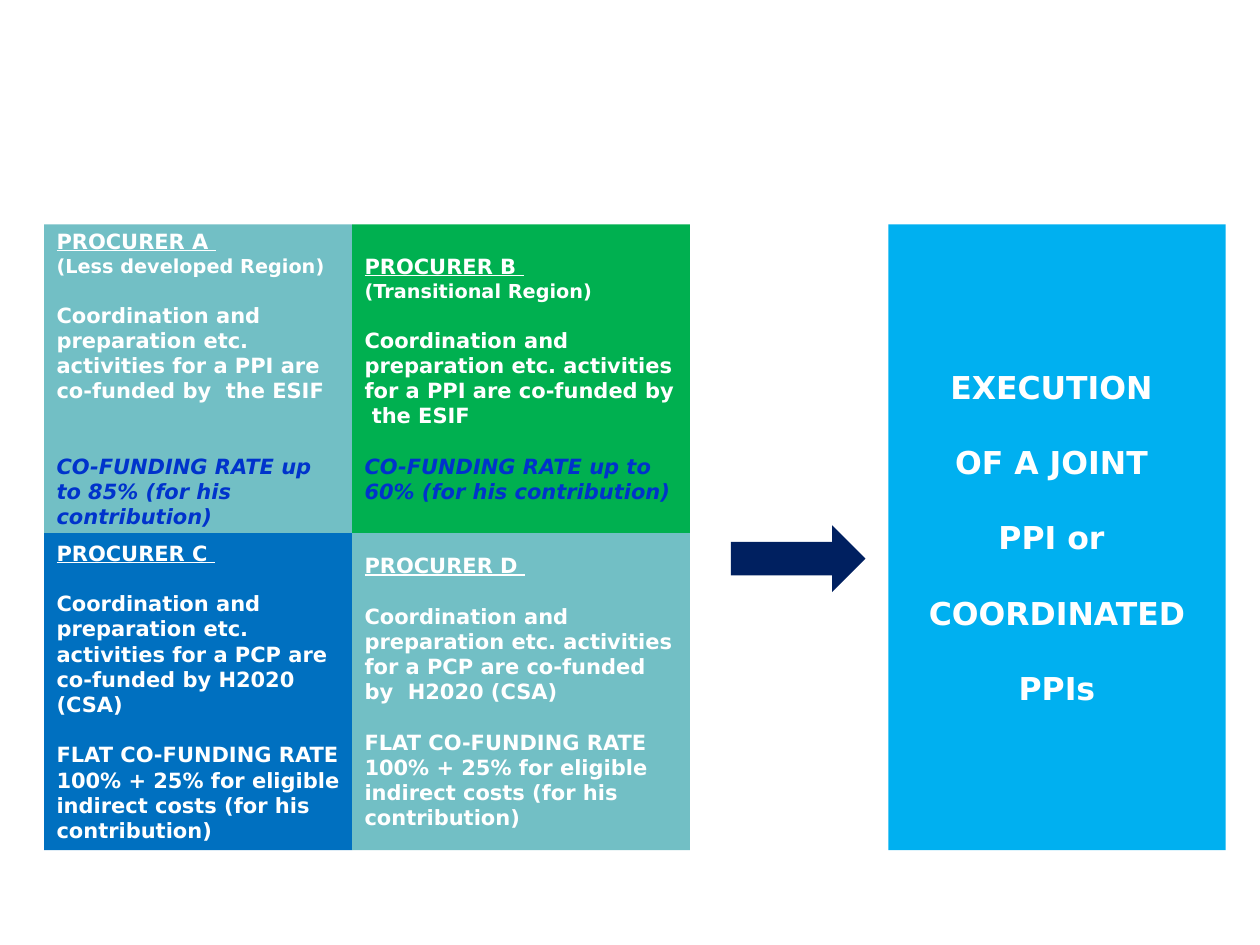
from pptx import Presentation
from pptx.dml.color import RGBColor
from pptx.enum import shapes, text
from pptx.util import Pt

WHITE = RGBColor(255, 255, 255)
TEAL = RGBColor(0x72, 0xBF, 0xC5)
GREEN = RGBColor(0x00, 0xB0, 0x50)
BLUE = RGBColor(0x00, 0x70, 0xC0)
SKY = RGBColor(0x00, 0xB0, 0xF0)
NAVY = RGBColor(0x00, 0x20, 0x60)
INK = RGBColor(0x00, 0x33, 0xCC)

LEFT, TOP = 25.2, 128.2
WIDTHS = (176, 193)
HEIGHTS = (176.4, 181.2)
GAP = 14.4
PLAN = "Coordination and preparation etc. activities for a {} are co-funded by {}"
FLAT = ("FLAT CO-FUNDING RATE 100% + 25% for eligible indirect costs "
        "(for his contribution)")
RATE = "CO-FUNDING RATE up to {} (for his contribution)"


def line(words, size=12, color=WHITE, italic=False, under=False,
         gap=0, align=text.PP_ALIGN.LEFT):
    return dict(words=words, size=size, color=color, italic=italic,
                under=under, gap=gap, align=align)


def head(name):
    return line(f"PROCURER {name} ", under=True)


def region(name, kind, rate, gap):
    return [
        head(name),
        line(f"({kind} Region)", size=11),
        line(PLAN.format("PPI", " the ESIF"), gap=GAP),
        line(RATE.format(rate), color=INK, italic=True, gap=gap),
    ]


def flat(name, fund):
    return [
        head(name),
        line(PLAN.format("PCP", fund), gap=GAP),
        line(FLAT, gap=GAP),
    ]


class Deck:
    font = "DejaVu Sans"

    def __init__(self):
        self.prs = Presentation()
        self.prs.slide_width, self.prs.slide_height = Pt(720), Pt(540)
        self.slide = self.prs.slides.add_slide(self.prs.slide_layouts[6])

    def shape(self, kind, x, y, w, h, fill):
        item = self.slide.shapes.add_shape(kind, Pt(x), Pt(y), Pt(w), Pt(h))
        item.shadow.inherit = False
        item.fill.solid()
        item.fill.fore_color.rgb = fill
        item.line.fill.background()
        return item

    def panel(self, x, y, w, h, fill, lines):
        box = self.shape(shapes.MSO_SHAPE.RECTANGLE, x, y, w, h, fill)
        frame = box.text_frame
        frame.word_wrap = True
        frame.vertical_anchor = text.MSO_ANCHOR.MIDDLE
        for i, row in enumerate(lines):
            para = frame.add_paragraph() if i else frame.paragraphs[0]
            para.alignment = row["align"]
            para.space_before = Pt(row["gap"])
            run = para.add_run()
            run.text = row["words"]
            font = run.font
            font.name, font.size, font.bold = self.font, Pt(row["size"]), True
            font.italic, font.underline = row["italic"], row["under"]
            font.color.rgb = row["color"]

    def arrow(self, x, y, w, h, fill):
        self.shape(shapes.MSO_SHAPE.RIGHT_ARROW, x, y, w, h, fill)


def main():
    deck = Deck()
    goal = ["EXECUTION ", "OF A JOINT ", "PPI or ", "COORDINATED", "PPIs"]
    deck.panel(507.6, TOP, 192.8, sum(HEIGHTS), SKY, [
        line(words, size=18, gap=21.5 if i else 0, align=text.PP_ALIGN.CENTER)
        for i, words in enumerate(goal)])

    cells = [
        (TEAL, region("A", "Less developed", "85%", 2 * GAP)),
        (GREEN, region("B", "Transitional", "60%", GAP)),
        (BLUE, flat("C", "H2020 (CSA)")),
        (TEAL, flat("D", " H2020 (CSA)")),
    ]
    for i, (fill, lines) in enumerate(cells):
        row, col = divmod(i, 2)
        deck.panel(LEFT + sum(WIDTHS[:col]), TOP + sum(HEIGHTS[:row]),
                   WIDTHS[col], HEIGHTS[row], fill, lines)

    deck.arrow(417.6, 300.2, 77, 38.2, NAVY)
    deck.prs.save("out.pptx")


if __name__ == "__main__":
    main()
